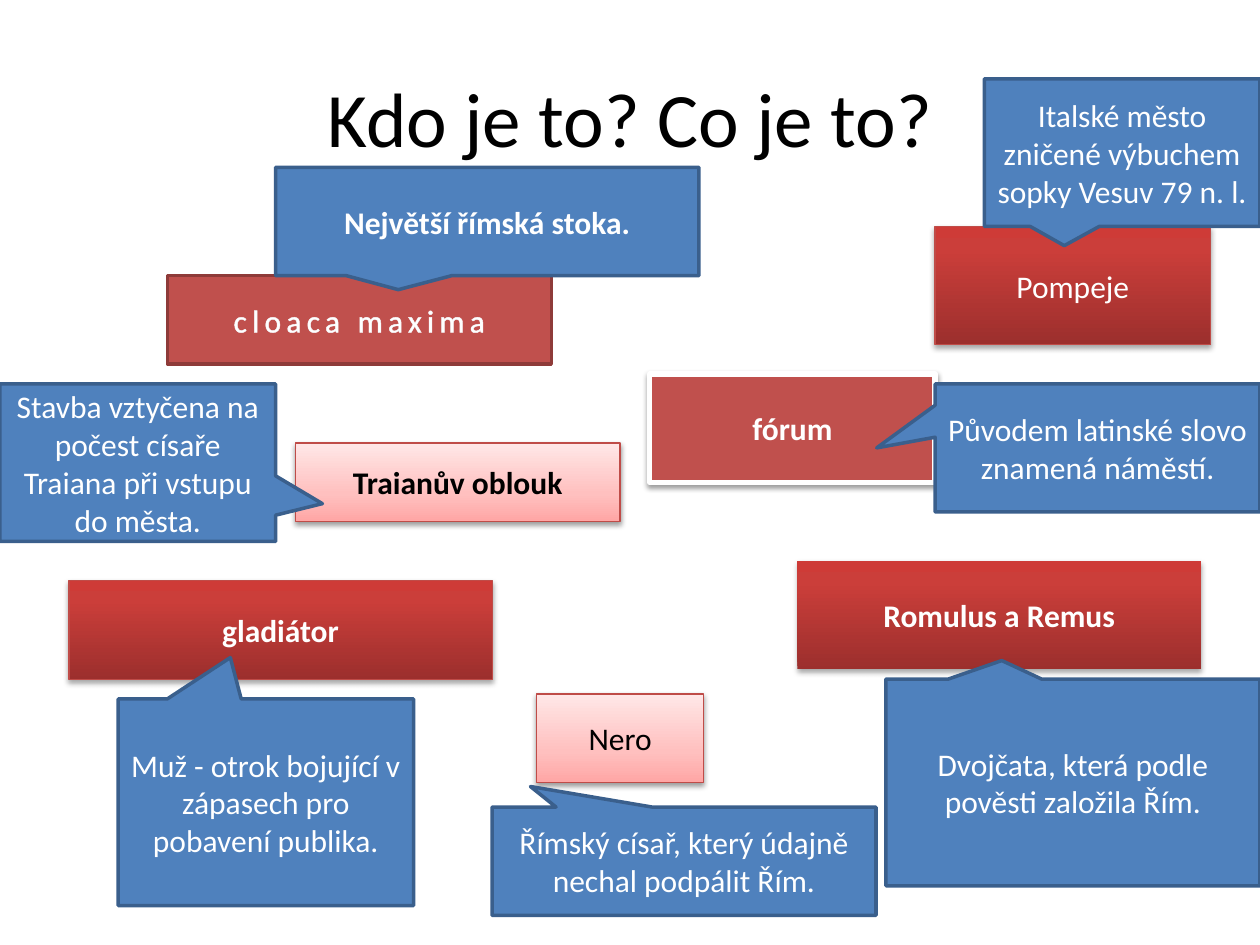
import copy

import pptx
import pptx.dml.color
import pptx.enum.dml
import pptx.enum.shapes
import pptx.enum.text
import pptx.oxml
import pptx.oxml.ns
import pptx.util

Pt = pptx.util.Pt
qn = pptx.oxml.ns.qn
SHAPES = pptx.enum.shapes.MSO_SHAPE


def color(value):
    return pptx.dml.color.RGBColor.from_string(value)


def write(frame, text, size=18, ink="FFFFFF", bold=False, spacing=0, outline=None):
    frame.word_wrap = True
    frame.vertical_anchor = pptx.enum.text.MSO_ANCHOR.MIDDLE
    para = frame.paragraphs[0]
    para.alignment = pptx.enum.text.PP_ALIGN.CENTER
    span = para.add_run()
    span.text = text
    span.font.name = "Calibri"
    span.font.size = Pt(size)
    span.font.bold = bold
    span.font.color.rgb = color(ink)
    properties = span.font._element
    if spacing:
        properties.set("spc", str(spacing * 100))
    if outline:
        properties.insert(0, pptx.oxml.parse_xml(
            f'<a:ln {pptx.oxml.ns.nsdecls("a")} w="{Pt(0.9)}"><a:solidFill>'
            f'<a:srgbClr val="{outline}"/></a:solidFill></a:ln>'))


deck = pptx.Presentation()
deck.slide_width = Pt(720)
deck.slide_height = Pt(540)
page = deck.slides.add_slide(deck.slide_layouts[5])

title = page.shapes.title
title.left, title.top, title.width, title.height = Pt(36), Pt(21.6), Pt(648), Pt(90)
write(title.text_frame, "Kdo je to? Co je to?", size=44, ink="000000")

pale_stops = [(0, "FFA6A5"), (0.35, "FFC0BF"), (1, "FFE7E7")]
deep_stops = [(0, "9C2F2D"), (0.8, "CB3E3A"), (1, "CE3B37")]
soft_shadow = (38, 1.6)
deep_shadow = (35, 1.8)
styles = {
    "plain": ("C0504D", ("8E3B39", 2), None),
    "framed": ("C0504D", ("FFFFFF", 3), soft_shadow),
    "pale": (pale_stops, ("BF4C48", 0.75), soft_shadow),
    "deep": (deep_stops, ("BF4C48", 0.75), deep_shadow),
    "borderless": (deep_stops, None, deep_shadow),
    "callout": ("4F81BD", ("3A5F8C", 2), None),
}

terms = [
    ("cloaca maxima", "plain", (95.7, 157.5, 219.4, 50.6), {"spacing": 3, "outline": "F4F6F9"}),
    ("fórum", "framed", (371.3, 213.8, 163.1, 61.9), {"bold": True}),
    ("Traianův oblouk", "pale", (168.8, 253.1, 185.6, 45), {"bold": True, "ink": "000000"}),
    ("gladiátor", "deep", (39.4, 331.9, 241.9, 56.2), {"bold": True}),
    ("Romulus a Remus", "borderless", (455.7, 320.6, 230.6, 61.9), {"bold": True}),
    ("Nero", "pale", (306.6, 396.6, 95.6, 50.6), {"ink": "000000"}),
    ("Pompeje", "deep", (534.3, 129.4, 157.5, 67.5), {}),
]
default_tip = (-0.21, 0.63)
clues = [
    ("Největší římská stoka.", (157.5, 95.6, 241.9, 61.9), default_tip, {"bold": True}),
    ("Italské město zničené výbuchem sopky Vesuv 79 n. l.",
     (562.5, 45, 157.5, 84.4), default_tip, {}),
    ("Stavba vztyčena na počest císaře Traiana při vstupu do města.",
     (0, 219.4, 157.5, 90), (0.67, 0.26), {}),
    ("Původem latinské slovo znamená náměstí.",
     (534.4, 219.4, 185.6, 73.1), (-0.68, 0), {}),
    ("Muž - otrok bojující v zápasech pro pobavení publika.",
     (67.5, 399.4, 168.8, 118.1), (-0.12, -0.7), {}),
    ("Dvojčata, která podle pověsti založila Řím.",
     (506.2, 388.1, 213.8, 118.1), (-0.19, -0.59), {}),
    ("Římský císař, který údajně nechal podpálit Řím.",
     (281.2, 461.2, 219.4, 61.9), (-0.4, -0.69), {}),
]

items = [(text, style, place, None, look) for text, style, place, look in terms]
items += [(text, "callout", place, tip, look) for text, place, tip, look in clues]

for text, style, place, tip, look in items:
    fill, border, shadow = styles[style]
    kind = SHAPES.RECTANGULAR_CALLOUT if tip else SHAPES.RECTANGLE
    box = page.shapes.add_shape(kind, *[Pt(length) for length in place])
    if tip:
        box.adjustments[0], box.adjustments[1] = tip

    if isinstance(fill, str):
        box.fill.solid()
        box.fill.fore_color.rgb = color(fill)
    else:
        box.fill.gradient()
        box.fill.gradient_angle = 90
        stop_list = box._element.spPr.find(".//" + qn("a:gsLst"))
        stop_list.append(copy.deepcopy(stop_list[0]))
        for stop, (position, shade) in zip(box.fill.gradient_stops, fill):
            stop.position = position
            stop.color.rgb = color(shade)

    if border:
        box.line.color.rgb = color(border[0])
        box.line.width = Pt(border[1])
    else:
        box.line.fill.background()

    box.shadow.inherit = False
    if shadow:
        opacity, distance = shadow
        box._element.spPr.find(qn("a:effectLst")).append(pptx.oxml.parse_xml(
            f'<a:outerShdw {pptx.oxml.ns.nsdecls("a")} blurRad="{Pt(3.1)}" '
            f'dist="{Pt(distance)}" dir="5400000" rotWithShape="0">'
            f'<a:srgbClr val="000000"><a:alpha val="{opacity * 1000}"/></a:srgbClr>'
            '</a:outerShdw>'))
    write(box.text_frame, text, **look)

deck.save("out.pptx")
